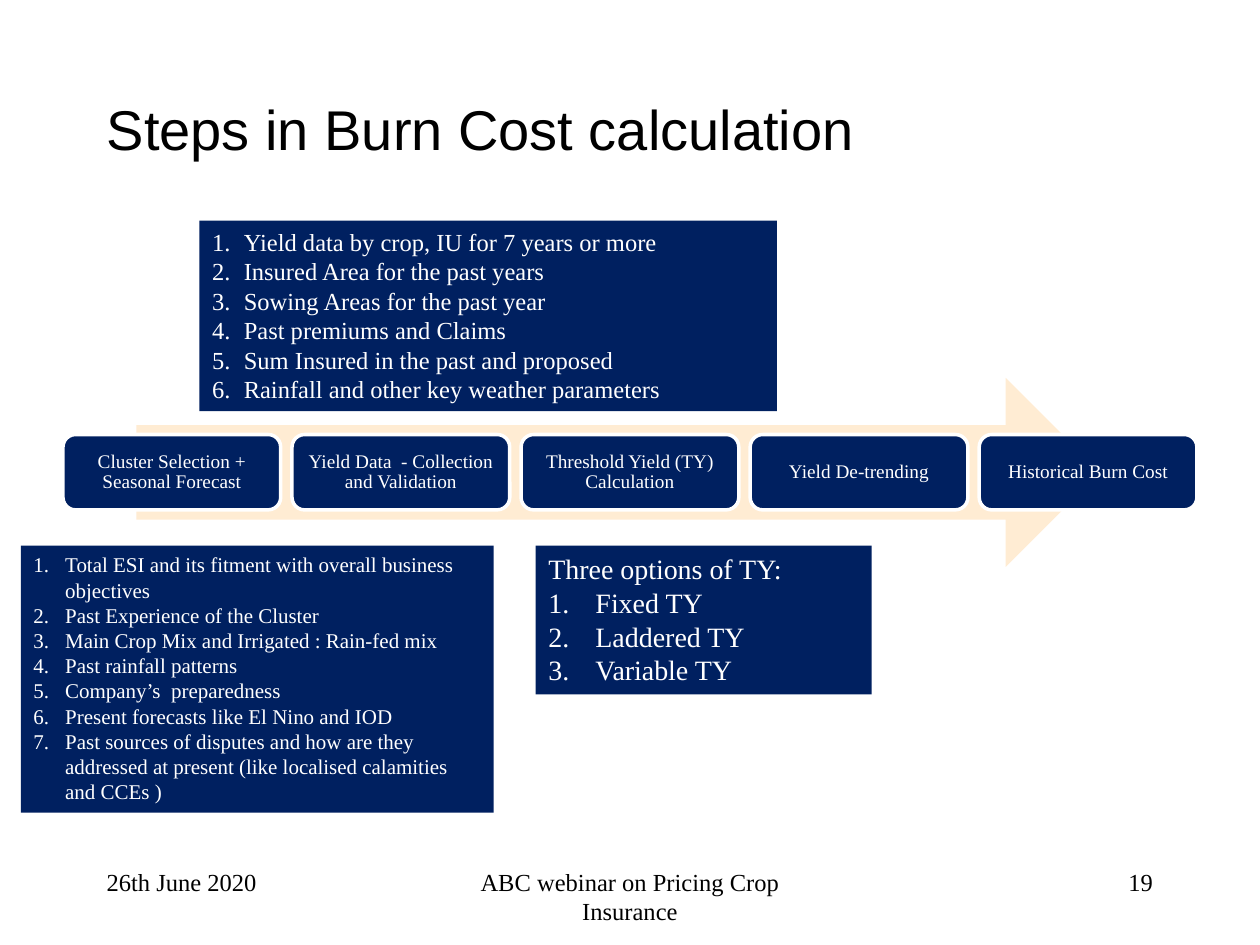
from dataclasses import dataclass

from lxml.etree import SubElement
from pptx import Presentation
from pptx.dml.color import RGBColor
from pptx.enum.shapes import MSO_SHAPE
from pptx.enum.text import MSO_ANCHOR, MSO_AUTO_SIZE, PP_ALIGN
from pptx.oxml.ns import qn
from pptx.util import Cm, Pt


@dataclass(frozen=True)
class Theme:
    navy: RGBColor = RGBColor(0x00, 0x20, 0x60)
    peach: RGBColor = RGBColor(0xFF, 0xEC, 0xD3)
    white: RGBColor = RGBColor(0xFF, 0xFF, 0xFF)
    black: RGBColor = RGBColor(0x00, 0x00, 0x00)
    heading_font: str = "Arial"
    body_font: str = "Times New Roman"
    title_size: int = 32
    cluster_size: int = 12
    data_size: int = 14
    yield_size: int = 16
    step_size: int = 11
    footer_size: int = 14


theme = Theme()


def write_text(paragraph, text, size, color, alignment=PP_ALIGN.LEFT, font=theme.body_font):
    paragraph.alignment = alignment
    paragraph.space_before = Pt(0)
    paragraph.line_spacing = 1.0
    run = paragraph.add_run()
    run.text = text
    run.font.name = font
    run.font.size = Pt(size)
    run.font.bold = False
    run.font.color.rgb = color


def set_numbering(paragraph, indent):
    properties = paragraph._p.get_or_add_pPr()
    properties.set("marL", str(indent))
    properties.set("indent", str(-indent))
    if indent:
        SubElement(properties, qn("a:buFont"), typeface="+mj-lt")
        SubElement(properties, qn("a:buAutoNum"), type="arabicPeriod")
    else:
        SubElement(properties, qn("a:buNone"))


presentation = Presentation()
presentation.slide_width = Cm(25.4)
presentation.slide_height = Cm(19.05)
slide = presentation.slides.add_slide(presentation.slide_layouts.get_by_name("Comparison"))

title = slide.shapes.title
title.left, title.top, title.width, title.height = Cm(1.9), Cm(1.7), Cm(18.85), Cm(1.78)
title.text_frame.vertical_anchor = MSO_ANCHOR.MIDDLE
write_text(title.text_frame.paragraphs[0], "Steps in Burn Cost calculation",
           theme.title_size, theme.black, font=theme.heading_font)

cluster_points = [
    "Total ESI and its fitment with overall business objectives",
    "Past Experience of the Cluster",
    "Main Crop Mix and Irrigated : Rain-fed mix",
    "Past rainfall patterns",
    "Company’s  preparedness",
    "Present forecasts like El Nino and IOD",
    "Past sources of disputes and how are they addressed at present "
    "(like localised calamities and CCEs )",
]
data_points = [
    "Yield data by crop, IU for 7 years or more",
    "Insured Area for the past years",
    "Sowing Areas for the past year",
    "Past premiums and Claims",
    "Sum Insured in the past and proposed",
    "Rainfall and other key weather parameters",
]
yield_points = ["Fixed TY", "Laddered TY", "Variable TY"]

lists = [
    (1, (0.42, 11.0, 9.53, 5.38), theme.cluster_size, 0.64, None, cluster_points),
    (2, (4.02, 4.45, 11.64, 3.84), theme.data_size, 0.64, None, data_points),
    (4, (10.8, 11.0, 6.77, 3.0), theme.yield_size, 0.95, "Three options of TY:", yield_points),
]
for index, (left, top, width, height), size, indent, heading, points in lists:
    panel = slide.placeholders[index]
    panel.left, panel.top, panel.width, panel.height = Cm(left), Cm(top), Cm(width), Cm(height)
    panel.fill.solid()
    panel.fill.fore_color.rgb = theme.navy
    text_frame = panel.text_frame
    text_frame.vertical_anchor = MSO_ANCHOR.TOP
    text_frame.auto_size = MSO_AUTO_SIZE.NONE
    rows = [(point, Cm(indent)) for point in points]
    if heading:
        rows.insert(0, (heading, 0))
    for position, (text, row_indent) in enumerate(rows):
        paragraph = text_frame.add_paragraph() if position else text_frame.paragraphs[0]
        write_text(paragraph, text, size, theme.white)
        set_numbering(paragraph, row_indent)

unused_placeholder = slide.placeholders[3].element
unused_placeholder.getparent().remove(unused_placeholder)

arrow = slide.shapes.add_shape(MSO_SHAPE.RIGHT_ARROW, Cm(2.75), Cm(7.62), Cm(19.43), Cm(3.81))
arrow.shadow.inherit = False
arrow.fill.solid()
arrow.fill.fore_color.rgb = theme.peach
arrow.line.fill.background()
slide.shapes.title.element.addnext(arrow.element)

steps = [
    "Cluster Selection + Seasonal Forecast",
    "Yield Data  - Collection and Validation",
    "Threshold Yield (TY) Calculation",
    "Yield De-trending",
    "Historical Burn Cost",
]
step_width = 4.39
step_pitch = (22.86 - step_width) / (len(steps) - 1)
for position, text in enumerate(steps):
    step = slide.shapes.add_shape(MSO_SHAPE.ROUNDED_RECTANGLE, Cm(1.27 + position * step_pitch),
                                  Cm(8.76), Cm(step_width), Cm(1.52))
    step.shadow.inherit = False
    step.fill.solid()
    step.fill.fore_color.rgb = theme.navy
    step.line.color.rgb = theme.white
    step.line.width = Pt(2)
    text_frame = step.text_frame
    text_frame.word_wrap = True
    text_frame.vertical_anchor = MSO_ANCHOR.MIDDLE
    text_frame.margin_left = text_frame.margin_right = Cm(0.13)
    text_frame.margin_top = text_frame.margin_bottom = Cm(0.13)
    paragraph = text_frame.paragraphs[0]
    write_text(paragraph, text, theme.step_size, theme.white, PP_ALIGN.CENTER)
    paragraph.line_spacing = 0.9

footers = [
    (1.9, 5.29, "26th June 2020", PP_ALIGN.LEFT),
    (8.68, 8.04, "ABC webinar on Pricing Crop Insurance", PP_ALIGN.CENTER),
    (18.2, 5.29, "19", PP_ALIGN.RIGHT),
]
for left, width, text, alignment in footers:
    footer = slide.shapes.add_textbox(Cm(left), Cm(17.35), Cm(width), Cm(1.27))
    footer.text_frame.word_wrap = True
    write_text(footer.text_frame.paragraphs[0], text, theme.footer_size, theme.black, alignment)

presentation.save("out.pptx")
